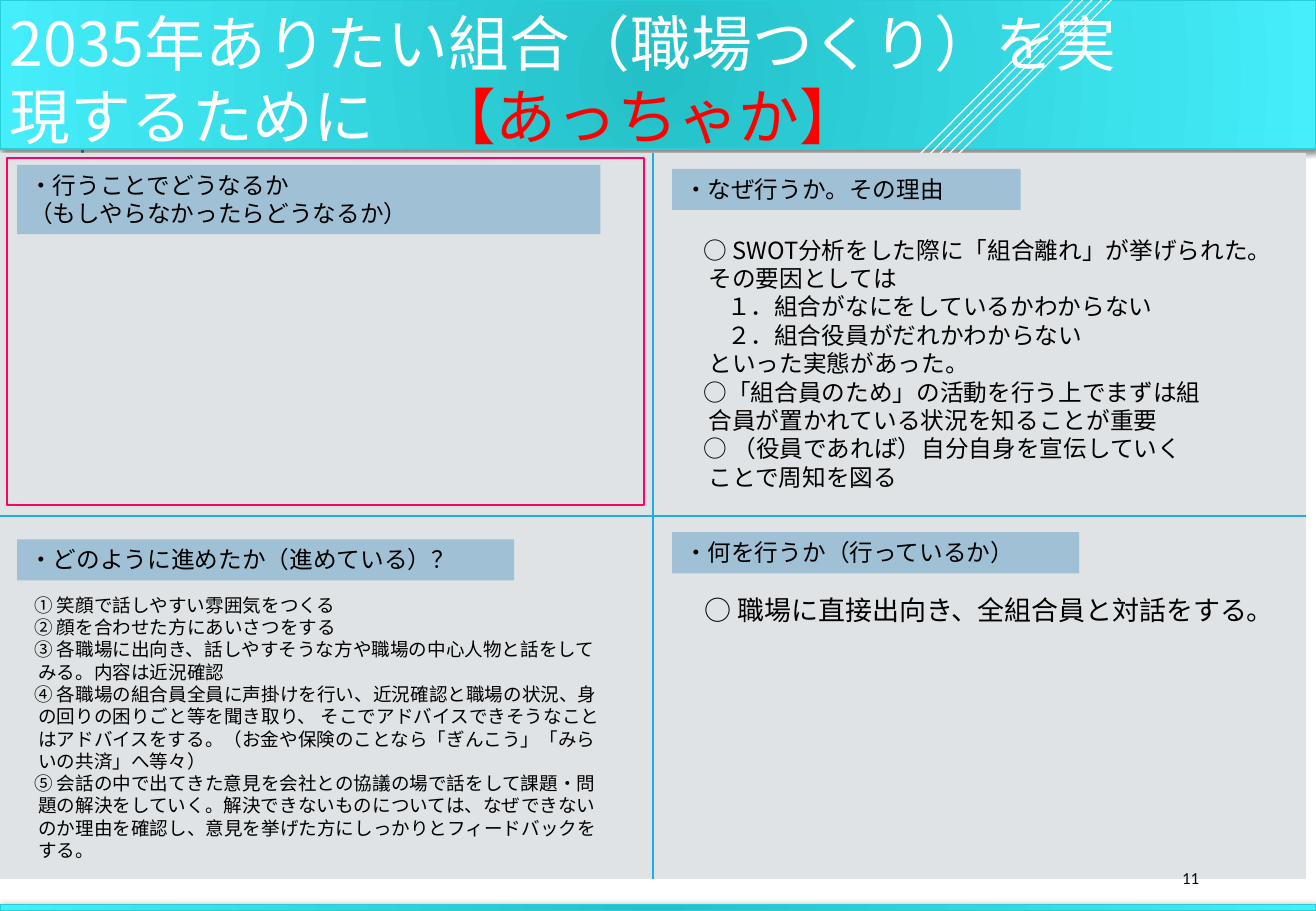
from lxml import etree
from pptx import Presentation
from pptx.dml.color import RGBColor
from pptx.enum import shapes, text
from pptx.oxml import ns, parse_xml
from pptx.util import Cm, Pt

WHITE = RGBColor(0xFF, 0xFF, 0xFF)
BLACK = RGBColor(0, 0, 0)
INK = RGBColor(0x0D, 0x0D, 0x0D)
RED = RGBColor(0xFF, 0, 0)
PINK = RGBColor(0xFF, 0, 0x66)
BLUE = RGBColor(0x1C, 0xAD, 0xE4)
TEAL = RGBColor(0x27, 0xCE, 0xD7)
DARK = RGBColor(0x24, 0xC0, 0xC8)
LIGHT = RGBColor(0x44, 0xEE, 0xFA)
GREY = RGBColor(0xDF, 0xE3, 0xE5)
STEEL = RGBColor(0xA0, 0xC1, 0xD5)
SANS = "Noto Sans CJK JP"

WIDTH, HEIGHT = 27.51, 19.05
BARS = [(0, 0, WIDTH, 3.12), (0, 18.92, WIDTH, 0.13)]
PANEL = (0, 3.2, 27.3, 15.18)
FRAME = (0.15, 3.3, 13.31, 7.26)
TITLE = [("2035年ありたい組合（職場つくり）を実現するために\u3000".replace("\u3000", "　"), WHITE),
         ("【あっちゃか】", RED)]
LABELS = [
    ((14.05, 3.53, 7.29, 0.86), ["・なぜ行うか。その理由"]),
    ((14.05, 11.13, 8.51, 0.86), ["・何を行うか（行っているか）"]),
    ((0.36, 11.28, 10.39, 0.86), ["・どのように進めたか（進めている）？"]),
    ((0.36, 3.45, 12.19, 1.45), ["・行うことでどうなるか", "（もしやらなかったらどうなるか）"]),
]
STEP = {" ": 0.22, "　": 1}
BODIES = [
    ((14.48, 12.29, 12.45, 0.94), 16, ["○ 職場に直接出向き、全組合員と対話をする。"]),
    ((14.45, 4.8, 12.45, 5.64), 14, [
        "○ SWOT分析をした際に「組合離れ」が挙げられた。",
        " その要因としては",
        "　１．組合がなにをしているかわからない",
        "　２．組合役員がだれかわからない",
        " といった実態があった。",
        "○「組合員のため」の活動を行う上でまずは組",
        " 合員が置かれている状況を知ることが重要",
        "○ （役員であれば）自分自身を宣伝していく",
        " ことで周知を図る"]),
    ((0.46, 12.29, 12.45, 5.89), 11, [
        "① 笑顔で話しやすい雰囲気をつくる",
        "② 顔を合わせた方にあいさつをする",
        "③ 各職場に出向き、話しやすそうな方や職場の中心人物と話をして",
        " みる。内容は近況確認",
        "④ 各職場の組合員全員に声掛けを行い、近況確認と職場の状況、身",
        " の回りの困りごと等を聞き取り、 そこでアドバイスできそうなこと",
        " はアドバイスをする。（お金や保険のことなら「ぎんこう」「みら",
        " いの共済」へ等々）",
        "⑤ 会話の中で出てきた意見を会社との協議の場で話をして課題・問",
        " 題の解決をしていく。解決できないものについては、なぜできない",
        " のか理由を確認し、意見を挙げた方にしっかりとフィードバックを",
        " する。"]),
]
SHADE = (f'<a:effectLst {ns.nsdecls("a")}><a:outerShdw blurRad="50800" dist="12700" '
         'dir="5400000" rotWithShape="0"><a:srgbClr val="000000"><a:alpha val="50000"/>'
         '</a:srgbClr></a:outerShdw></a:effectLst>')
RADIAL = (f'<a:path {ns.nsdecls("a")} path="circle"><a:fillToRect l="100000" t="100000" '
          'r="100000" b="100000"/></a:path>')


def place(item, box):
    """Move an item to a box given in centimetres."""
    for key, val in zip(("left", "top", "width", "height"), box):
        setattr(item, key, Cm(val))


def write(item, paras, size, face=SANS, anchor=text.MSO_ANCHOR.TOP):
    """Fill an item with paragraphs, each a list of text and colour runs."""
    frame = item.text_frame
    form = {"word_wrap": True, "auto_size": text.MSO_AUTO_SIZE.NONE,
            "vertical_anchor": anchor}
    for key, val in form.items():
        setattr(frame, key, val)
    for num, runs in enumerate(paras):
        para = frame.add_paragraph() if num else frame.paragraphs[0]
        form = {"alignment": text.PP_ALIGN.LEFT, "line_spacing": Pt(size * 1.2),
                "space_before": Pt(0), "space_after": Pt(0)}
        for key, val in form.items():
            setattr(para, key, val)
        lead = STEP.get(runs[0][0][0], 0)
        props = para._p.get_or_add_pPr()
        props.set("marL", str(int(Pt(size * lead))))
        props.set("indent", "0")
        etree.SubElement(props, ns.qn("a:buNone"))
        for words, tone in runs:
            run = para.add_run()
            run.text = words[1:] if lead else words
            for key, val in {"size": Pt(size), "name": face, "bold": False}.items():
                setattr(run.font, key, val)
            run.font.color.rgb = tone
            etree.SubElement(run._r.get_or_add_rPr(), ns.qn("a:ea")).set("typeface", face)


def rect(slide, box, fill=None):
    """Add a plain rectangle without outline."""
    item = slide.shapes.add_shape(shapes.MSO_SHAPE.RECTANGLE, *map(Cm, box))
    item.shadow.inherit = False
    item.line.fill.background()
    if fill is None:
        item.fill.background()
    else:
        item.fill.solid()
        item.fill.fore_color.rgb = fill
    return item


def edge(item, tone, width):
    """Set the colour and width of a line."""
    item.line.color.rgb = tone
    item.line.width = Pt(width)


def link(host, ends, tone, width=0.75):
    """Add a straight line without shadow."""
    item = host.add_connector(shapes.MSO_CONNECTOR.STRAIGHT, *map(Cm, ends))
    edge(item, tone, width)
    etree.SubElement(item._element.spPr, ns.qn("a:effectLst"))
    return item


def bar(slide, box):
    """Add a turquoise gradient bar with a soft shadow."""
    item = rect(slide, box)
    item.fill.gradient()
    for stop, tone, spot in zip(item.fill.gradient_stops, (DARK, LIGHT), (0, 1)):
        stop.color.rgb = tone
        stop.position = spot
    props = item._element.spPr
    lin = props.find(".//" + ns.qn("a:lin"))
    lin.getparent().replace(lin, parse_xml(RADIAL))
    edge(item, TEAL, 0.75)
    props.replace(props.find(ns.qn("a:effectLst")), parse_xml(SHADE))


def main():
    """Build the slide and save it."""
    deck = Presentation()
    deck.slide_width, deck.slide_height = Cm(WIDTH), Cm(HEIGHT)
    slide = deck.slides.add_slide(deck.slide_layouts[4])
    tree = slide.shapes
    head, *slots = list(slide.placeholders)

    link(tree, (1.73, 4.83, 1.73, 2.29), BLUE, 1.5)
    bar(slide, BARS[0])
    group = tree.add_group_shape()
    for num in range(5):
        left = 18.52 + 0.2 * num
        link(group.shapes, (left, 3.94, left + 3.91, 0), WHITE)
    bar(slide, BARS[1])

    place(head, (-0.05, -0.08, 24, 3.45))
    write(head, [TITLE], 36, anchor=text.MSO_ANCHOR.MIDDLE)
    tree._spTree.append(head._element)

    panel = rect(slide, PANEL, GREY)
    x, y, w, h = PANEL
    midx, midy = x + w / 2, y + h / 2
    for ends, first, last in (((midx, y, midx, y + h), 0, 2),
                              ((x, midy, x + w, midy), 1, 3)):
        line = link(tree, ends, BLUE)
        line.begin_connect(panel, first)
        line.end_connect(panel, last)

    for box, lines in LABELS:
        write(rect(slide, box, STEEL), [[(words, BLACK)] for words in lines], 14)
    page = tree.add_textbox(*map(Cm, (24.46, 17.98, 2.21, 0.76)))
    write(page, [[("11", INK)]], 10, "Calibri", text.MSO_ANCHOR.MIDDLE)

    for slot, (box, size, lines) in zip(slots, BODIES):
        place(slot, box)
        write(slot, [[(words, BLACK)] for words in lines], size)
        tree._spTree.append(slot._element)
    for slot in slots[len(BODIES):]:
        tree._spTree.remove(slot._element)
    edge(rect(slide, FRAME), PINK, 1.25)
    deck.save("out.pptx")


if __name__ == "__main__":
    main()
